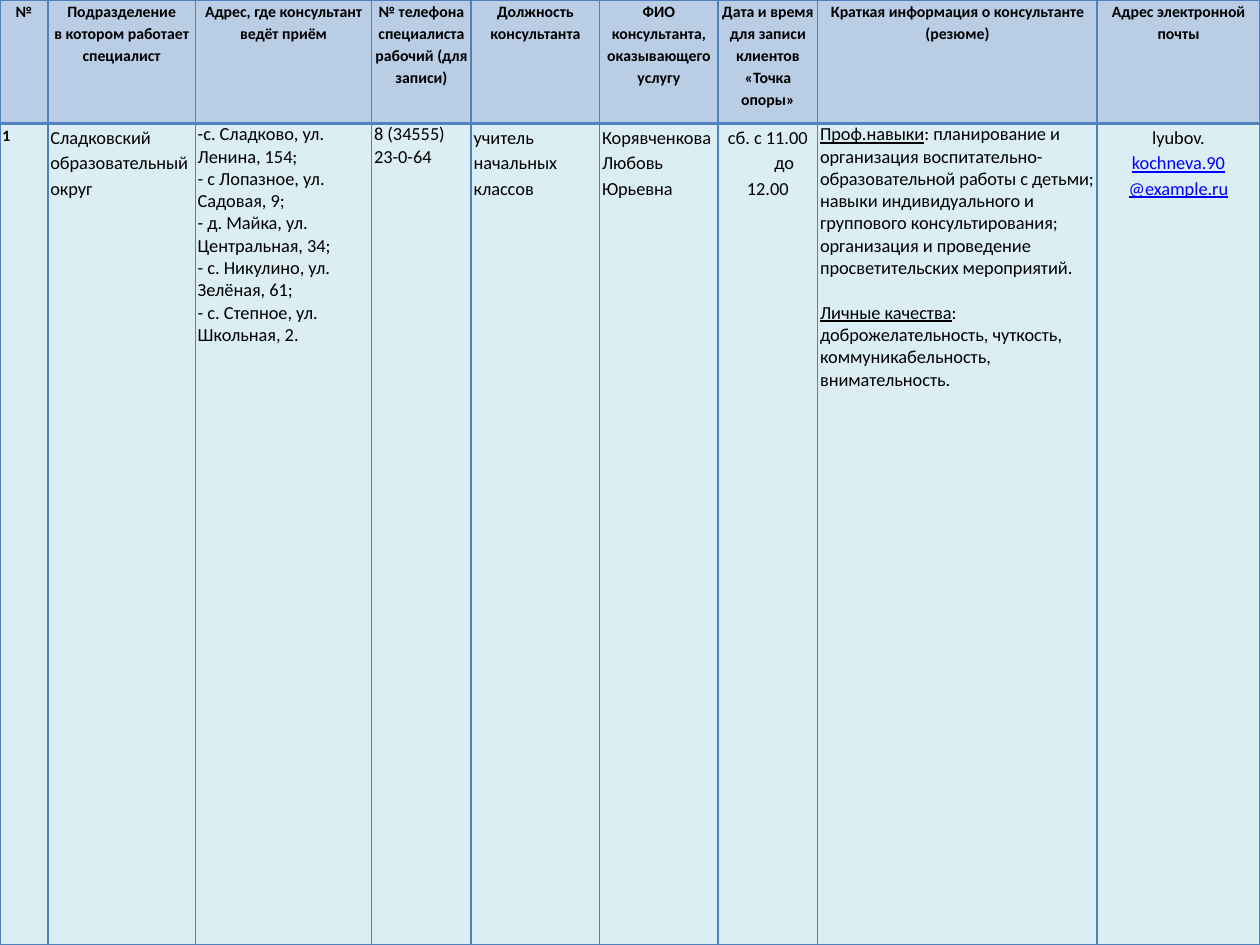
from lxml.etree import SubElement
from pptx import Presentation
from pptx.dml.color import RGBColor
from pptx.enum.text import PP_ALIGN
from pptx.oxml.ns import qn
from pptx.util import Inches, Pt

COLORS = {"header": "B9CDE5", "body": "DBEEF4", "border": "4F81BD",
          "text": "000000", "link": "0000FF"}
FONT = "Calibri"
HEADER_SIZE, BODY_SIZE = 9, 10.5
HEADER_HEIGHT, BODY_HEIGHT = 0.98, 6.52
LOOSE = 1.15

COLUMNS = [
    (0.38, ["№"]),
    (1.17, ["Подразделение", "в котором работает специалист"]),
    (1.4, ["Адрес, где консультант ведёт приём"]),
    (0.79, ["№ телефона специалиста", "рабочий (для записи)"]),
    (1.02, ["Должность", "консультанта"]),
    (0.94, ["ФИО консультанта,", "оказывающего услугу"]),
    (0.79, ["Дата и время для записи клиентов", "«Точка опоры»"]),
    (2.22, ["Краткая информация о консультанте (резюме)"]),
    (1.29, ["Адрес электронной почты"]),
]

CONSULTANT = [
    {"lines": ["1"], "size": HEADER_SIZE, "bold": True, "spacing": LOOSE},
    {"lines": ["Сладковский образовательный округ"], "spacing": LOOSE},
    {"lines": ["-с. Сладково, ул. Ленина, 154;",
               "- с Лопазное, ул. Садовая, 9;",
               "- д. Майка, ул. Центральная, 34;",
               "- с. Никулино, ул. Зелёная, 61;",
               "- с. Степное, ул. Школьная, 2."]},
    {"lines": ["8 (34555)", "23-0-64"]},
    {"lines": ["учитель начальных классов"], "spacing": LOOSE},
    {"lines": ["Корявченкова Любовь Юрьевна"], "spacing": LOOSE},
    {"lines": ["сб. с 11.00", "до", "12.00"], "spacing": LOOSE,
     "centered": True, "indents": {1: 0.26}},
    {"lines": [("Проф.навыки", ": планирование и организация воспитательно-"
                "образовательной работы с детьми; навыки индивидуального и "
                "группового консультирования; организация и проведение "
                "просветительских мероприятий."),
               ("Личные качества", ":"),
               "доброжелательность, чуткость, коммуникабельность, внимательность."],
     "gaps": {1: 12.8}},
    {"lines": ["lyubov.", ("kochneva.90", ""), ("@example.ru", "")],
     "spacing": LOOSE, "centered": True, "underline_color": "link"},
]


def set_border(cell, side, width):
    line = SubElement(cell._tc.get_or_add_tcPr(), qn(f"a:ln{side}"), w=str(Pt(width)))
    fill = SubElement(line, qn("a:solidFill"))
    SubElement(fill, qn("a:srgbClr"), val=COLORS["border"])


def add_run(paragraph, text, size, bold, color, underline=False):
    run = paragraph.add_run()
    run.text = text
    run.font.name = FONT
    run.font.size = Pt(size)
    run.font.bold = bold
    run.font.underline = underline
    run.font.color.rgb = RGBColor.from_string(COLORS[color])


def fill_cell(cell, fill, widths, lines, size=BODY_SIZE, bold=False, spacing=1.0,
              centered=False, indents={}, gaps={}, underline_color="text"):
    for side, width in zip("LRTB", widths):
        set_border(cell, side, width)
    cell.fill.solid()
    cell.fill.fore_color.rgb = RGBColor.from_string(COLORS[fill])
    cell.margin_left = cell.margin_right = Inches(0.02)
    cell.margin_top = cell.margin_bottom = 0
    for index, line in enumerate(lines):
        frame = cell.text_frame
        paragraph = frame.add_paragraph() if index else frame.paragraphs[0]
        paragraph.alignment = PP_ALIGN.CENTER if centered else PP_ALIGN.LEFT
        paragraph.line_spacing = spacing
        if index in gaps:
            paragraph.space_before = Pt(gaps[index])
        if index in indents:
            paragraph._p.get_or_add_pPr().set("marL", str(Inches(indents[index])))
        underlined, plain = line if isinstance(line, tuple) else ("", line)
        if underlined:
            add_run(paragraph, underlined, size, bold, underline_color, True)
        if plain:
            add_run(paragraph, plain, size, bold, "text")


def main():
    presentation = Presentation()
    presentation.slide_width, presentation.slide_height = Inches(10), Inches(7.5)
    slide = presentation.slides.add_slide(presentation.slide_layouts[6])
    schedule = slide.shapes.add_table(
        2, len(COLUMNS), 0, 0, Inches(10), Inches(HEADER_HEIGHT + BODY_HEIGHT)).table
    schedule.first_row = schedule.horz_banding = False
    for row, height in zip(schedule.rows, (HEADER_HEIGHT, BODY_HEIGHT)):
        row.height = Inches(height)
    for index, ((width, heading), details) in enumerate(zip(COLUMNS, CONSULTANT)):
        schedule.columns[index].width = Inches(width)
        fill_cell(schedule.cell(0, index), "header", (1, 1, 1, 2), heading,
                  size=HEADER_SIZE, bold=True, spacing=LOOSE, centered=True)
        fill_cell(schedule.cell(1, index), "body", (1, 1, 2, 1), **details)
    presentation.save("out.pptx")


if __name__ == "__main__":
    main()
